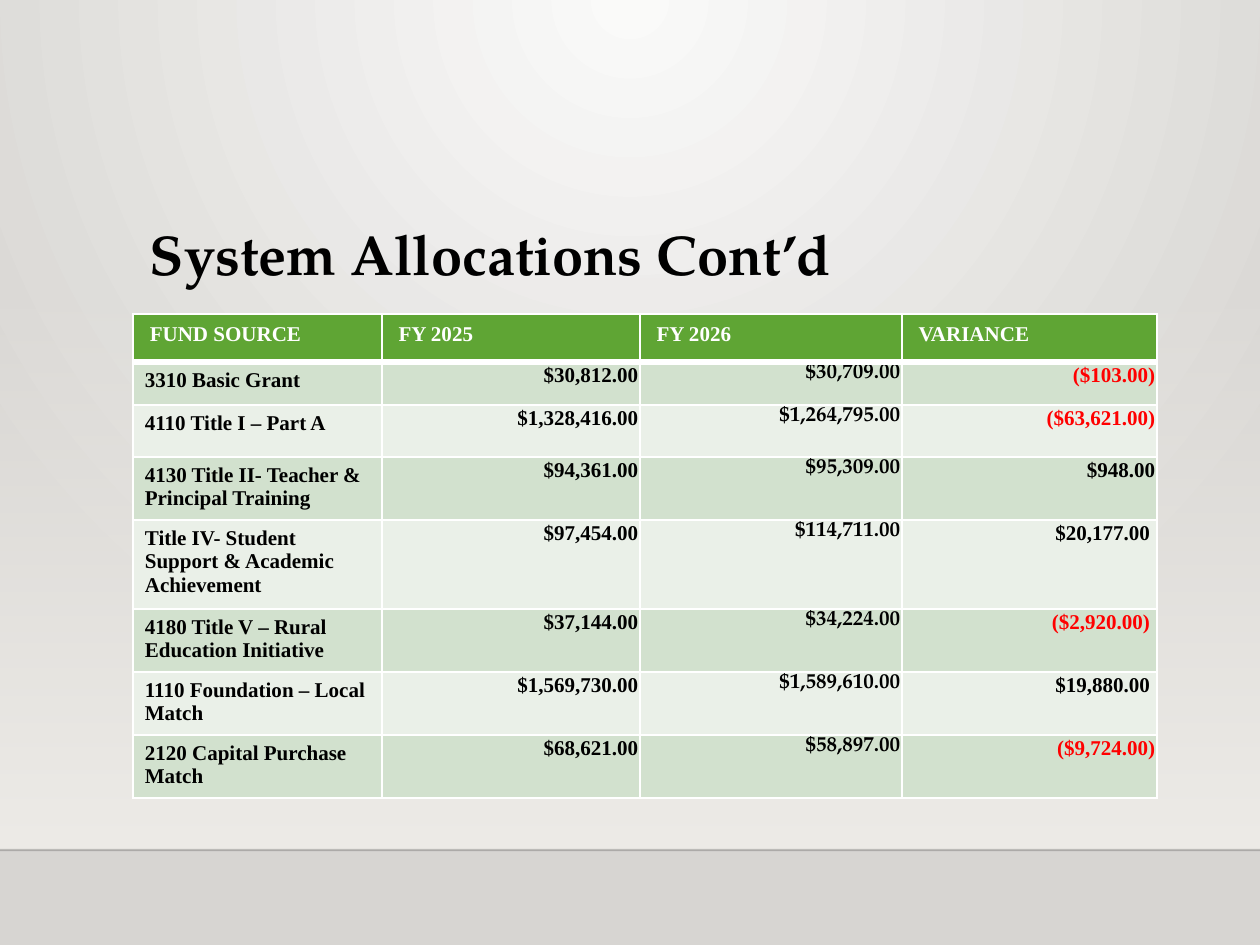
import pptx
import pptx.util
import pptx.dml.color
import pptx.enum.shapes
import pptx.enum.text
import pptx.oxml
import pptx.oxml.ns
from lxml import etree

Pt = pptx.util.Pt
ALIGN = pptx.enum.text.PP_ALIGN
NAMESPACE = pptx.oxml.ns.nsdecls("a")
SERIF = "Times New Roman"
PALATINO = "TeX Gyre Pagella"


def color(hex_text):
    return pptx.dml.color.RGBColor.from_string(hex_text)


def gradient(start, end, direction, start_alpha=100):
    return pptx.oxml.parse_xml(
        f'<a:gradFill {NAMESPACE} rotWithShape="1"><a:gsLst>'
        f'<a:gs pos="0"><a:srgbClr val="{start}"><a:alpha val="{start_alpha * 1000}"/></a:srgbClr></a:gs>'
        f'<a:gs pos="100000"><a:srgbClr val="{end}"/></a:gs>'
        f'</a:gsLst>{direction}</a:gradFill>')


deck = pptx.Presentation()
deck.slide_width, deck.slide_height = Pt(540), Pt(405)
page = deck.slides.add_slide(deck.slide_layouts[5])

page.background.fill.solid()
backdrop = page.background.fill._xPr
backdrop.replace(backdrop[0], gradient(
    "FAFAF9", "D7D5D2",
    '<a:path path="circle"><a:fillToRect l="43000" r="43000" b="100000"/></a:path>'))

wall = page.shapes.add_shape(
    pptx.enum.shapes.MSO_SHAPE.RECTANGLE, 0, Pt(119), Pt(540), Pt(245))
wall.shadow.inherit = False
wall.line.fill.background()
wall.fill.solid()
wall_fill = wall._element.spPr.find(pptx.oxml.ns.qn("a:solidFill"))
wall._element.spPr.replace(wall_fill, gradient(
    "EDEBE7", "EDEBE7", '<a:lin ang="5400000" scaled="0"/>', 0))

floor_line = page.shapes.add_connector(
    pptx.enum.shapes.MSO_CONNECTOR.STRAIGHT, 0, Pt(364.3), Pt(540), Pt(364.3))
floor_line.line.width = Pt(1)
floor_line.line.color.rgb = color("000001")
line_color = floor_line._element.spPr.find(".//" + pptx.oxml.ns.qn("a:srgbClr"))
etree.SubElement(line_color, pptx.oxml.ns.qn("a:alpha"), val="20000")
etree.SubElement(floor_line._element.spPr, pptx.oxml.ns.qn("a:effectLst"))

title = page.shapes.title
title.left, title.top, title.width, title.height = Pt(57), Pt(90.5), Pt(359), Pt(36)
title.text = "System Allocations Cont’d"
title.text_frame.vertical_anchor = pptx.enum.text.MSO_ANCHOR.TOP
title.text_frame.auto_size = pptx.enum.text.MSO_AUTO_SIZE.NONE
para = title.text_frame.paragraphs[0]
para.alignment = ALIGN.LEFT
para.font.name, para.font.size, para.font.bold = PALATINO, Pt(24), True
para.font.color.rgb = color("000000")

allocations = [
    ("FUND SOURCE", "FY 2025", "FY 2026", "VARIANCE"),
    ("3310 Basic Grant", "$30,812.00", "$30,709.00", "($103.00)"),
    ("4110 Title I – Part A", "$1,328,416.00", "$1,264,795.00", "($63,621.00)"),
    ("4130 Title II- Teacher & Principal Training", "$94,361.00", "$95,309.00", "$948.00"),
    ("Title IV- Student Support & Academic Achievement", "$97,454.00", "$114,711.00", "$20,177.00 "),
    ("4180 Title V – Rural Education Initiative", "$37,144.00", "$34,224.00", "($2,920.00) "),
    ("1110 Foundation – Local Match", "$1,569,730.00", "$1,589,610.00", "$19,880.00 "),
    ("2120 Capital Purchase Match", "$68,621.00", "$58,897.00", "($9,724.00)"),
]
widths = [106.6, 110.6, 112.3, 109.3]
heights = [20.5, 18.5, 22.3, 27, 38.2, 27, 27, 27]
table = page.shapes.add_table(
    len(heights), len(widths), Pt(57), Pt(134.6), Pt(sum(widths)), Pt(sum(heights))).table
for column, width in zip(table.columns, widths):
    column.width = Pt(width)
for row, height in zip(table.rows, heights):
    row.height = Pt(height)

for row_index, values in enumerate(allocations):
    for column_index, value in enumerate(values):
        cell = table.cell(row_index, column_index)
        cell.text = value
        para = cell.text_frame.paragraphs[0]
        para.font.name, para.font.size, para.font.bold = SERIF, Pt(9), True
        if row_index == 0:
            fill, ink = "5FA534", "FFFFFF"
        else:
            fill = "D2E1CE" if row_index % 2 else "EAF0E8"
            ink = "FF0000" if value.startswith("(") else "000000"
            if column_index == 0:
                cell.margin_left = cell.margin_right = Pt(5.1)
                cell.margin_top = cell.margin_bottom = Pt(2.9)
            else:
                cell.margin_left = cell.margin_right = cell.margin_top = Pt(0.7)
                cell.margin_bottom = 0
                para.alignment = ALIGN.RIGHT
            if column_index == 2:
                para.font.name = PALATINO
        para.font.color.rgb = color(ink)
        for position, side in enumerate(("lnL", "lnR", "lnT", "lnB")):
            thick = (row_index, side) in ((0, "lnB"), (1, "lnT"))
            cell._tc.get_or_add_tcPr().insert(position, pptx.oxml.parse_xml(
                f'<a:{side} {NAMESPACE} w="{Pt(3 if thick else 1)}"><a:solidFill>'
                f'<a:srgbClr val="FFFFFF"/></a:solidFill></a:{side}>'))
        cell.fill.solid()
        cell.fill.fore_color.rgb = color(fill)

deck.save("out.pptx")
